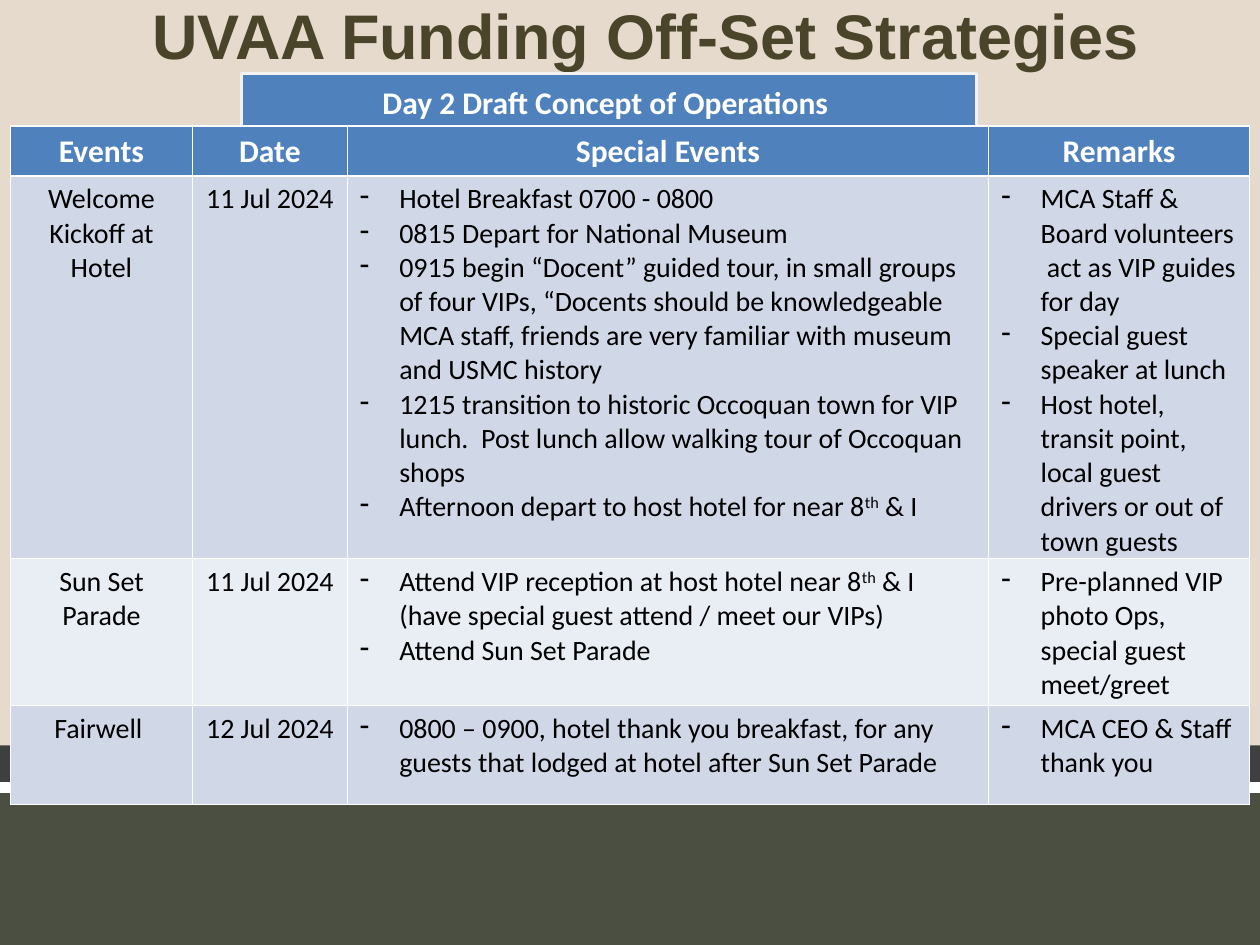
from dataclasses import dataclass

from lxml import etree
from pptx import Presentation
from pptx.dml.color import RGBColor
from pptx.enum.shapes import MSO_CONNECTOR, MSO_SHAPE
from pptx.enum.text import MSO_ANCHOR, PP_ALIGN
from pptx.oxml.ns import qn
from pptx.util import Pt

RECTANGLE = MSO_SHAPE.RECTANGLE
STRAIGHT = MSO_CONNECTOR.STRAIGHT
CENTER, LEFT = PP_ALIGN.CENTER, PP_ALIGN.LEFT
MIDDLE, TOP = MSO_ANCHOR.MIDDLE, MSO_ANCHOR.TOP
TITLE_ONLY = 5
SLIDE_WIDTH, SLIDE_HEIGHT = 720, 540


@dataclass(frozen=True)
class Theme:
    sand: str = "E6DACC"
    olive: str = "4A4F42"
    charcoal: str = "3F3F3F"
    white: str = "FFFFFF"
    black: str = "000000"
    title_brown: str = "4A452A"
    blue: str = "4F81BD"
    banner_edge: str = "F2F2F2"
    bands: tuple = ("D0D8E8", "E9EDF4")
    title_font: str = "Arial"
    body_font: str = "Calibri"
    title_size: int = 36
    heading_size: int = 18
    body_size: int = 16
    dash_indent: float = 22.5


class SlideBuilder:
    def __init__(self, slide, theme):
        self.slide = slide
        self.theme = theme

    def style(self, paragraph, size, color, bold=False, align=CENTER, face=None):
        paragraph.alignment = align
        font = paragraph.font
        font.name = face or self.theme.body_font
        font.size = Pt(size)
        font.bold = bold
        font.color.rgb = RGBColor.from_string(color)

    def add_text(self, paragraph, text):
        """Add text; parts between carets are set as superscript."""
        for index, part in enumerate(text.split("^")):
            run = paragraph.add_run()
            run.text = part
            if index % 2:
                run.font._element.set("baseline", "30000")

    def dash(self, paragraph):
        properties = paragraph._p.get_or_add_pPr()
        properties.set("marL", str(Pt(self.theme.dash_indent)))
        properties.set("indent", str(-Pt(self.theme.dash_indent)))
        etree.SubElement(properties, qn("a:buFontTx"))
        etree.SubElement(properties, qn("a:buChar")).set("char", "-")

    def panel(self, left, top, width, height, fill, edge=None):
        panel = self.slide.shapes.add_shape(
            RECTANGLE, Pt(left), Pt(top), Pt(width), Pt(height))
        panel.shadow.inherit = False
        panel.fill.solid()
        panel.fill.fore_color.rgb = RGBColor.from_string(fill)
        if edge:
            panel.line.color.rgb = RGBColor.from_string(edge)
            panel.line.width = Pt(2)
        else:
            panel.line.fill.background()
        return panel

    def rule(self, top, color, width):
        rule = self.slide.shapes.add_connector(
            STRAIGHT, 0, Pt(top), Pt(SLIDE_WIDTH), Pt(top))
        rule.line.color.rgb = RGBColor.from_string(color)
        rule.line.width = Pt(width)
        etree.SubElement(rule._element.spPr, qn("a:effectLst"))

    def title(self, text, left, top, width, height):
        title = self.slide.shapes.title
        title.left, title.top = Pt(left), Pt(top)
        title.width, title.height = Pt(width), Pt(height)
        title.text_frame.text = text
        self.style(title.text_frame.paragraphs[0], self.theme.title_size,
                   self.theme.title_brown, True, face=self.theme.title_font)
        # Bring the title in front of the backdrop
        self.slide.shapes._spTree.append(title._element)

    def banner(self, text, left, top, width, height):
        banner = self.panel(left, top, width, height,
                            self.theme.blue, self.theme.banner_edge)
        frame = banner.text_frame
        frame.vertical_anchor = MIDDLE
        frame.text = text
        self.style(frame.paragraphs[0], self.theme.heading_size,
                   self.theme.white, True)

    def cell(self, cell, content, fill, size, color, bold):
        cell.fill.solid()
        cell.fill.fore_color.rgb = RGBColor.from_string(fill)
        cell.vertical_anchor = TOP
        cell.margin_bottom = 0
        dashed = isinstance(content, list)
        frame = cell.text_frame
        for index, text in enumerate(content if dashed else [content]):
            paragraph = frame.add_paragraph() if index else frame.paragraphs[0]
            if dashed:
                self.dash(paragraph)
            self.add_text(paragraph, text)
            self.style(paragraph, size, color, bold, LEFT if dashed else CENTER)

    def table(self, rows, left, top, widths, heights):
        theme = self.theme
        table = self.slide.shapes.add_table(
            len(rows), len(widths), Pt(left), Pt(top),
            Pt(sum(widths)), Pt(sum(heights))).table
        for column, width in zip(table.columns, widths):
            column.width = Pt(width)
        for r, contents in enumerate(rows):
            table.rows[r].height = Pt(heights[r])
            if r == 0:
                look = theme.blue, theme.heading_size, theme.white, True
            else:
                look = theme.bands[(r - 1) % 2], theme.body_size, theme.black, False
            for c, content in enumerate(contents):
                self.cell(table.cell(r, c), content, *look)


SCHEDULE = [
    ["Events", "Date", "Special Events", "Remarks"],
    ["Welcome Kickoff at Hotel", "11 Jul 2024",
     ["Hotel Breakfast 0700 - 0800",
      "0815 Depart for National Museum",
      "0915 begin “Docent” guided tour, in small groups of four VIPs, “Docents "
      "should be knowledgeable MCA staff, friends are very familiar with museum "
      "and USMC history",
      "1215 transition to historic Occoquan town for VIP lunch.  Post lunch allow "
      "walking tour of Occoquan shops",
      "Afternoon depart to host hotel for near 8^th^ & I"],
     ["MCA Staff & Board volunteers  act as VIP guides for day",
      "Special guest speaker at lunch",
      "Host hotel, transit point, local guest drivers or out of town guests"]],
    ["Sun Set Parade", "11 Jul 2024",
     ["Attend VIP reception at host hotel near 8^th^ & I (have special guest "
      "attend / meet our VIPs)",
      "Attend Sun Set Parade"],
     ["Pre-planned VIP photo Ops, special guest meet/greet"]],
    ["Fairwell ", "12 Jul 2024",
     ["0800 – 0900, hotel thank you breakfast, for any guests that lodged at "
      "hotel after Sun Set Parade"],
     ["MCA CEO & Staff thank you"]],
]


def main():
    presentation = Presentation()
    presentation.slide_width = Pt(SLIDE_WIDTH)
    presentation.slide_height = Pt(SLIDE_HEIGHT)
    slide = presentation.slides.add_slide(presentation.slide_layouts[TITLE_ONLY])
    theme = Theme()
    builder = SlideBuilder(slide, theme)

    # Backdrop
    builder.panel(0, 0, SLIDE_WIDTH, 480, theme.sand)
    builder.panel(0, 450, SLIDE_WIDTH, 90, theme.olive)
    builder.panel(0, 426, SLIDE_WIDTH, 24, theme.charcoal)
    builder.rule(450, theme.white, 6)

    # Headings
    builder.title("UVAA Funding Off-Set Strategies", 72, -6, 594, 51)
    builder.banner("Day 2 Draft Concept of Operations ", 138, 42, 420, 33)

    # Schedule
    builder.table(SCHEDULE, 6, 72, widths=(104, 88.5, 366.5, 149),
                  heights=(28.5, 218.5, 84, 56.5))

    presentation.save("out.pptx")


if __name__ == "__main__":
    main()
